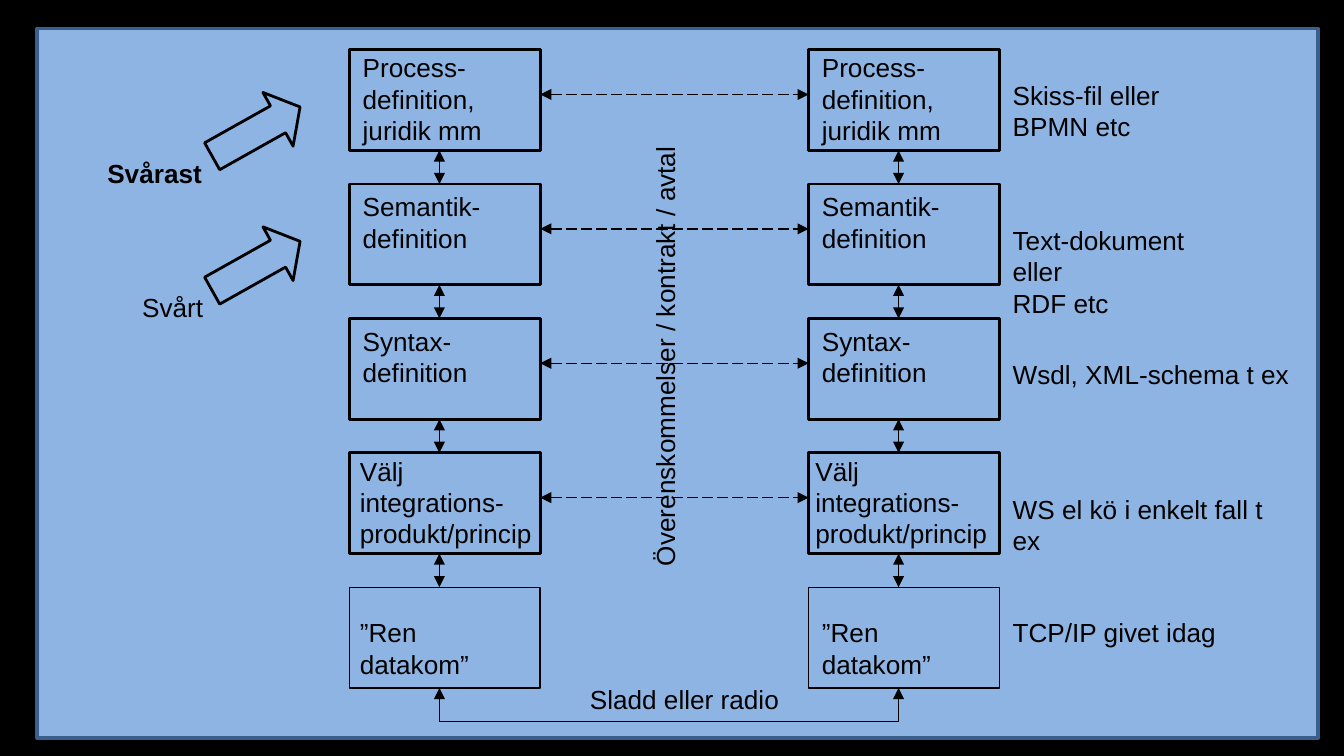
from lxml.etree import SubElement
from pptx import Presentation
from pptx.dml.color import RGBColor
from pptx.enum.dml import MSO_LINE_DASH_STYLE as Dash
from pptx.enum.shapes import MSO_CONNECTOR as Connector, MSO_SHAPE as Shape
from pptx.enum.text import MSO_ANCHOR as Anchor
from pptx.oxml.ns import qn
from pptx.util import Pt

COLORS = {"background": "000000", "panel": "8EB4E3", "border": "3A5F8C", "ink": "000000"}
TEXT_FORMAT = {"name": "Arial", "size": Pt(14)}

# Each layer: wording, text left offsets for both stacks, text top offset, text size
LAYERS = [
    ("Process-\ndefinition,\njuridik mm", (0, 0), -2.4, (84, 58)),
    ("Semantik-\ndefinition", (0, 0), 0, (84, 41)),
    ("Syntax-\ndefinition", (0, 0), 0, (84, 41)),
    ("Välj\nintegrations-\nprodukt/princip", (-1.5, -3.5), -2.4, (112, 58)),
    ("”Ren\ndatakom”", (-1.5, 0), 12.2, (106, 41)),
]
# Each example: wording, top offset from its layer, size
EXAMPLES = [
    ("Skiss-fil eller\nBPMN etc", 12.2, (98, 41)),
    ("Text-dokument\neller\nRDF etc", 18, (144, 58)),
    ("Wsdl, XML-schema t ex", 18, (166, 24)),
    ("WS el kö i enkelt fall t\nex", 18, (174, 41)),
    ("TCP/IP givet idag", 12.2, (128, 24)),
]
# Each difficulty: wording, left, width, bold
DIFFICULTIES = [("Svårast", 50.4, 68, True), ("Svårt", 69.1, 50, False)]

STACK_LEFTS = (187.2, 433.2)
FIRST_TOP, PITCH = 26.6, 72
BOX_WIDTH, BOX_HEIGHT = 102.2, 54
AXIS_OFFSET = 48.2
CONTRACT_OFFSET = 24
EXAMPLE_LEFT = 535.4
LINK_BOTTOM = 386.6


def rgb(name):
    return RGBColor.from_string(COLORS[name])


def add_shape(kind, left, top, width, height, line_width, fill=None, line="ink"):
    shape = slide.shapes.add_shape(kind, Pt(left), Pt(top), Pt(width), Pt(height))
    shape.shadow.inherit = False
    if fill:
        shape.fill.solid()
        shape.fill.fore_color.rgb = rgb(fill)
    else:
        shape.fill.background()
    shape.line.color.rgb = rgb(line)
    shape.line.width = Pt(line_width)
    return shape


def add_text(text, left, top, width, height, bold=False):
    box = slide.shapes.add_textbox(Pt(left), Pt(top), Pt(width), Pt(height))
    frame = box.text_frame
    frame.word_wrap = False
    frame.vertical_anchor = Anchor.TOP
    para = frame.paragraphs[0]
    para.text = text
    for span in para.runs:
        for key, value in {**TEXT_FORMAT, "bold": bold}.items():
            setattr(span.font, key, value)
        span.font.color.rgb = rgb("ink")
    return box


def add_line(start, end, heads=(), dashed=False):
    """Draw a thin line; heads names the arrow ends, headEnd before tailEnd."""
    line = slide.shapes.add_connector(
        Connector.STRAIGHT, *(Pt(value) for value in (*start, *end)))
    line.line.color.rgb = rgb("ink")
    line.line.width = Pt(0.75)
    if dashed:
        line.line.dash_style = Dash.LONG_DASH
    outline = line.line._get_or_add_ln()
    for head in heads:
        SubElement(outline, qn(f"a:{head}"), type="triangle")
    SubElement(line._element.spPr, qn("a:effectLst"))


deck = Presentation()
deck.slide_width, deck.slide_height = Pt(720), Pt(405)
slide = deck.slides.add_slide(deck.slide_layouts[6])
slide.background.fill.solid()
slide.background.fill.fore_color.rgb = rgb("background")
add_shape(Shape.RECTANGLE, 20, 15.3, 686, 380.2, 2, "panel", "border")

both = ("headEnd", "tailEnd")
axes = [left + AXIS_OFFSET for left in STACK_LEFTS]
last = len(LAYERS) - 1
for index, (layer, example) in enumerate(zip(LAYERS, EXAMPLES)):
    top = FIRST_TOP + index * PITCH
    bottom = top + BOX_HEIGHT
    wording, offsets, text_offset, size = layer
    for left, axis, offset in zip(STACK_LEFTS, axes, offsets):
        add_shape(Shape.RECTANGLE, left, top, BOX_WIDTH, BOX_HEIGHT,
                  0.75 if index == last else 1.5)
        add_text(wording, left + offset, top + text_offset, *size)
        if index == last:
            add_line((axis, bottom), (axis, LINK_BOTTOM), both[:1])
        else:
            add_line((axis, bottom), (axis, top + PITCH), both)
    if index != last:
        contract_y = top + CONTRACT_OFFSET
        add_line((STACK_LEFTS[0] + BOX_WIDTH, contract_y),
                 (STACK_LEFTS[1], contract_y), both, dashed=True)
    wording, offset, size = example
    add_text(wording, EXAMPLE_LEFT, top + offset, *size)

for index, (wording, left, width, bold) in enumerate(DIFFICULTIES):
    top = FIRST_TOP + index * PITCH
    arrow = add_shape(Shape.RIGHT_ARROW, 110.2, top + 27.4, 54, 33, 1.5)
    arrow.rotation = 330.7
    arrow.adjustments[0], arrow.adjustments[1] = 0.5, 0.41
    add_text(wording, left, top + BOX_HEIGHT, width, 24, bold)

add_line((axes[0], LINK_BOTTOM), (axes[1], LINK_BOTTOM))
add_text("Sladd eller radio", 308.9, 362.6, 120, 24)
contract = add_text("Överenskommelser / kontrakt / avtal", 236.2, 177.8, 240.5, 24.5)
contract.rotation = 270

deck.save("out.pptx")
